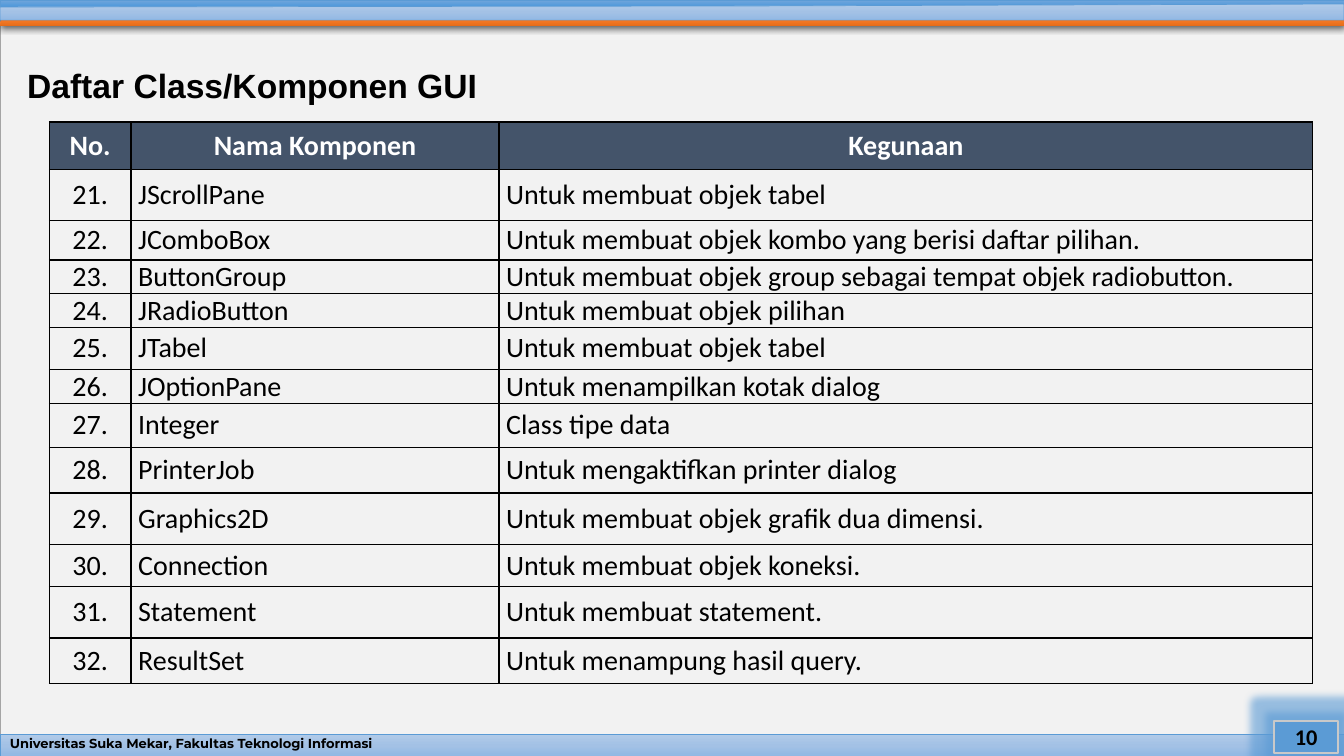
from copy import deepcopy
from dataclasses import dataclass

from lxml import etree
from pptx import Presentation, util as u
from pptx.dml.color import RGBColor
from pptx.enum import shapes, text
from pptx.oxml.ns import qn


@dataclass(frozen=True)
class Theme:
    page: str = "F2F2F2"
    page_line: str = "A5A5A5"
    accent: str = "5B9BD5"
    badge_line: str = "C9C9C9"
    header: str = "44546A"
    ink: str = "000000"
    light: str = "FFFFFF"
    pale_blue: tuple = ("B1CBE9", "A3C1E5", "93B9E4")
    strong_blue: tuple = ("71A6DB", "559BDB", "448ACA")
    orange: tuple = ("F18C57", "F67B28", "E56C19")
    heading_font: str = "Arial"
    body_font: str = "Calibri"
    footer_font: str = "Montserrat"
    title_size: float = 24
    table_size: float = 20
    badge_size: float = 16
    footer_size: float = 9.3


T = Theme()
ALIGN = text.PP_ALIGN
WIDTH, HEIGHT = 13.33, 7.5
COLUMNS = (0.81, 3.65, 8.07)
ROW_HEIGHTS = (0.47, 0.51, 0.39, 0.33, 0.33, 0.42, 0.33,
               0.44, 0.45, 0.51, 0.42, 0.51, 0.45)
HEADINGS = ("No.", "Nama Komponen", "Kegunaan")
FIRST_NUMBER = 21
COMPONENTS = (
    ("JScrollPane", "Untuk membuat objek tabel"),
    ("JComboBox", "Untuk membuat objek kombo yang berisi daftar pilihan."),
    ("ButtonGroup", "Untuk membuat objek group sebagai tempat objek radiobutton."),
    ("JRadioButton", "Untuk membuat objek pilihan"),
    ("JTabel", "Untuk membuat objek tabel"),
    ("JOptionPane", "Untuk menampilkan kotak dialog"),
    ("Integer", "Class tipe data"),
    ("PrinterJob", "Untuk mengaktifkan printer dialog"),
    ("Graphics2D", "Untuk membuat objek grafik dua dimensi."),
    ("Connection", "Untuk membuat objek koneksi."),
    ("Statement", "Untuk membuat statement."),
    ("ResultSet", "Untuk menampung hasil query."),
)


def inches(values):
    return [u.Inches(v) for v in values]


def rgb(value):
    return RGBColor.from_string(value)


def write(tf, content, size, font=T.body_font, color=T.ink, bold=True,
          align=ALIGN.LEFT, spacing=None):
    tf.word_wrap = True
    p = tf.paragraphs[0]
    p.alignment = align
    if spacing:
        p.line_spacing = spacing
    r = p.add_run()
    r.text = content
    r.font.size, r.font.name, r.font.bold = u.Pt(size), font, bold
    r.font.color.rgb = rgb(color)


def add_text(s, box, content, **style):
    sp = s.shapes.add_textbox(*inches(box))
    sp.text_frame.vertical_anchor = text.MSO_ANCHOR.MIDDLE
    write(sp.text_frame, content, **style)


def paint(sp, fill, line=None, weight=0.5):
    """Fill with one colour, or with a tuple of three from top to bottom."""
    sp.shadow.inherit = False
    if isinstance(fill, tuple):
        sp.fill.gradient()
        sp.fill.gradient_angle = 270
        first = sp._element.spPr.find(".//" + qn("a:gs"))
        middle = deepcopy(first)
        middle.set("pos", "50000")
        first.addnext(middle)
        for stop, color in zip(sp.fill.gradient_stops, fill):
            stop.color.rgb = rgb(color)
    else:
        sp.fill.solid()
        sp.fill.fore_color.rgb = rgb(fill)
    if line:
        sp.line.color.rgb = rgb(line)
        sp.line.width = u.Pt(weight)
    else:
        sp.line.fill.background()


def add_effect(sp, tag, color, alpha, **attributes):
    effects = sp._element.spPr.find(qn("a:effectLst"))
    effect = etree.SubElement(effects, qn(tag), attributes)
    clr = etree.SubElement(effect, qn("a:srgbClr"), val=color)
    etree.SubElement(clr, qn("a:alpha"), val=str(alpha * 1000))


def add_rect(s, box, fill, line, weight=0.5):
    sp = s.shapes.add_shape(shapes.MSO_SHAPE.RECTANGLE, *inches(box))
    paint(sp, fill, line, weight)
    return sp


def add_band(s, points, fill, line=None):
    corners = [inches(point) for point in points]
    builder = s.shapes.build_freeform(*corners[0])
    builder.add_line_segments(corners[1:], close=True)
    sp = builder.convert_to_shape()
    paint(sp, fill, line)
    return sp


def add_background(s, w, h):
    add_rect(s, (0, 0.04, w, h - 0.04), T.page, T.page_line)
    stripe = add_band(s, [(w, 0.26), (0, 0.26), (0.03, 0.13), (w, 0.13)], T.orange)
    add_effect(stripe, "a:outerShdw", T.ink, 63, blurRad=str(u.Pt(4.5)),
               dist=str(u.Pt(1.5)), dir="5400000", rotWithShape="0")
    add_rect(s, (0, 0, w, 0.11), T.strong_blue, T.accent)
    add_band(s, [(w, 0.2), (0, 0.2), (0, 0.07), (w * 0.55, 0.06), (w, 0.04)],
             T.pale_blue, T.accent)


def add_footer(s, box):
    left, top, width, height = box
    add_rect(s, box, T.pale_blue, T.accent)
    add_text(s, box, "Universitas Suka Mekar, Fakultas Teknologi Informasi",
             size=T.footer_size, font=T.footer_font, spacing=0.7)
    badge = add_rect(s, (left + width - 0.69, top - 0.14, 0.63, 0.32),
                     T.accent, T.badge_line, 1.5)
    add_effect(badge, "a:glow", T.accent, 60, rad=str(u.Pt(11)))
    badge.text_frame.vertical_anchor = text.MSO_ANCHOR.MIDDLE
    write(badge.text_frame, "10", size=T.badge_size, align=ALIGN.CENTER)


def add_borders(cell):
    tc_pr = cell._tc.get_or_add_tcPr()
    for side in ("L", "R", "T", "B"):
        ln = etree.SubElement(tc_pr, qn("a:ln" + side), w=str(u.Pt(1)))
        fill = etree.SubElement(ln, qn("a:solidFill"))
        etree.SubElement(fill, qn("a:srgbClr"), val=T.ink)


def format_cell(cell, content, align, header):
    add_borders(cell)
    cell.vertical_anchor = text.MSO_ANCHOR.MIDDLE
    cell.margin_left = cell.margin_right = u.Inches(0.04 if header else 0.07)
    cell.margin_top = cell.margin_bottom = 0
    if header:
        cell.fill.solid()
        cell.fill.fore_color.rgb = rgb(T.header)
    else:
        cell.fill.background()
    write(cell.text_frame, content, size=T.table_size, bold=header,
          color=T.light if header else T.ink, align=align)


def add_component_table(s, left, top):
    rows = [HEADINGS] + [(f"{n}.", *item)
                         for n, item in enumerate(COMPONENTS, FIRST_NUMBER)]
    box = (left, top, sum(COLUMNS), sum(ROW_HEIGHTS))
    table = s.shapes.add_table(len(rows), len(COLUMNS), *inches(box)).table
    table.first_row = table.horz_banding = False
    for column, width in zip(table.columns, COLUMNS):
        column.width = u.Inches(width)
    body_aligns = (ALIGN.CENTER, ALIGN.LEFT, ALIGN.JUSTIFY)
    for i, (row, height, values) in enumerate(zip(table.rows, ROW_HEIGHTS, rows)):
        row.height = u.Inches(height)
        for cell, value, align in zip(row.cells, values, body_aligns):
            format_cell(cell, value, align if i else ALIGN.CENTER, header=i == 0)


def main():
    prs = Presentation()
    prs.slide_width, prs.slide_height = inches((WIDTH, HEIGHT))
    s = prs.slides.add_slide(prs.slide_layouts[6])
    add_background(s, WIDTH, HEIGHT)
    add_footer(s, (0, HEIGHT - 0.21, WIDTH, 0.21))
    add_text(s, (0.17, 0.53, 12.85, 0.68), "Daftar Class/Komponen GUI",
             size=T.title_size, font=T.heading_font, spacing=0.9)
    add_component_table(s, 0.49, 1.21)
    prs.save("out.pptx")


if __name__ == "__main__":
    main()
